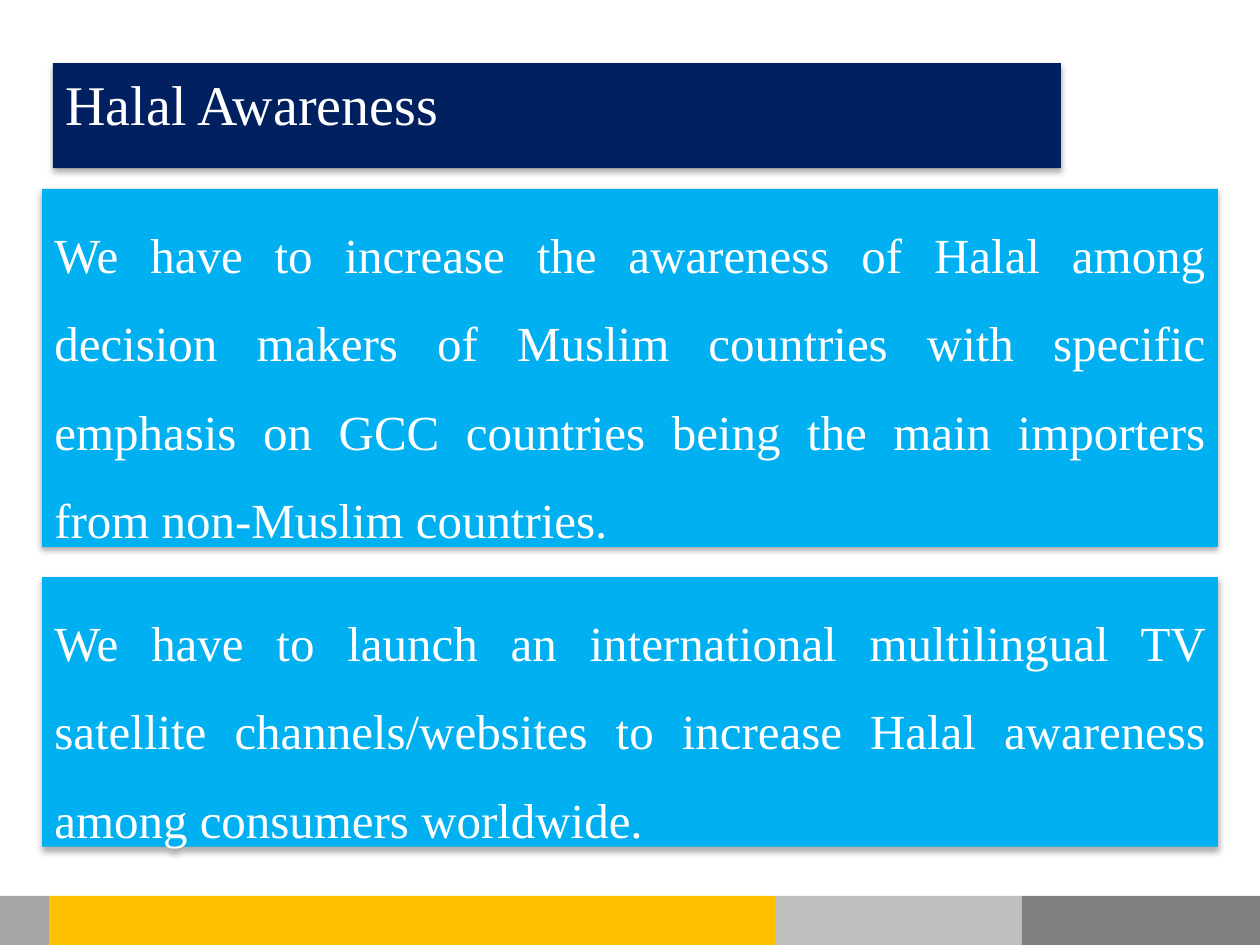
from dataclasses import dataclass

from lxml import etree
from pptx import Presentation
from pptx import util as u
from pptx.dml.color import RGBColor
from pptx.enum import shapes, text
from pptx.oxml.ns import qn


@dataclass(frozen=True)
class Theme:
    font: str = "Times New Roman"
    title_size: int = 32
    body_size: int = 28
    white: str = "FFFFFF"
    navy: str = "002060"
    sky: str = "00B0F0"
    gold: str = "FFC000"
    light_gray: str = "BFBFBF"
    mid_gray: str = "A6A6A6"
    dark_gray: str = "808080"


@dataclass(frozen=True)
class Box:
    left: float
    top: float
    width: float
    height: float


@dataclass(frozen=True)
class Panel:
    top: float
    height: float
    wording: str


@dataclass(frozen=True)
class Band:
    left: float
    right: float
    color: str


THEME = Theme()
SLIDE_WIDTH, SLIDE_HEIGHT = 10, 7.5
PANEL_MARGIN = SLIDE_WIDTH / 30
BAND_HEIGHT = 0.39

TITLE_BOX = Box(0.42, 0.5, 0.8 * SLIDE_WIDTH, 0.64)
PANELS = [
    Panel(1.5, 2.84, "We have to increase the awareness of Halal among decision makers "
          "of Muslim countries with specific emphasis on GCC countries being the main "
          "importers from non-Muslim countries."),
    Panel(4.58, 2.14, "We have to launch an international multilingual TV satellite "
          "channels/websites to increase Halal awareness among consumers worldwide."),
]
BANDS = [
    Band(0, BAND_HEIGHT, THEME.mid_gray),
    Band(BAND_HEIGHT, 6.16, THEME.gold),
    Band(6.16, 8.11, THEME.light_gray),
    Band(8.11, SLIDE_WIDTH, THEME.dark_gray),
]


def format_shape(shape, color: str) -> None:
    """Give a shape a flat fill, no outline and no shadow."""
    shape.fill.solid()
    shape.fill.fore_color.rgb = RGBColor.from_string(color)
    shape.line.fill.background()
    shape.shadow.inherit = False


def add_rectangle(slide, box: Box, color: str):
    lengths = (u.Inches(value) for value in (box.left, box.top, box.width, box.height))
    shape = slide.shapes.add_shape(shapes.MSO_SHAPE.RECTANGLE, *lengths)
    format_shape(shape, color)
    return shape


def add_soft_shadow(shape) -> None:
    """Drop a faint black shadow straight below the shape."""
    effects = shape._element.spPr.find(qn("a:effectLst"))
    shadow = etree.SubElement(
        effects, qn("a:outerShdw"), blurRad=str(u.Pt(3.5)), dist=str(u.Pt(2.2)),
        dir=str(90 * 60000), algn="ctr", rotWithShape="0")
    color = etree.SubElement(shadow, qn("a:srgbClr"), val="000000")
    etree.SubElement(color, qn("a:alpha"), val="32000")


def write_text(shape, wording: str, *, size: int, line_spacing: float = 1.0) -> None:
    frame = shape.text_frame
    frame.word_wrap = True
    frame.auto_size = text.MSO_AUTO_SIZE.SHAPE_TO_FIT_TEXT
    frame.vertical_anchor = text.MSO_ANCHOR.TOP
    paragraph = frame.paragraphs[0]
    paragraph.alignment = text.PP_ALIGN.JUSTIFY
    paragraph.line_spacing = line_spacing
    run = paragraph.add_run()
    run.text = wording
    run.font.name = THEME.font
    run.font.size = u.Pt(size)
    run.font.color.rgb = RGBColor.from_string(THEME.white)


def main() -> None:
    presentation = Presentation()
    presentation.slide_width = u.Inches(SLIDE_WIDTH)
    presentation.slide_height = u.Inches(SLIDE_HEIGHT)
    slide = presentation.slides.add_slide(
        presentation.slide_layouts.get_by_name("Title Only"))

    # Title bar
    title = slide.shapes.title
    title.left, title.top = u.Inches(TITLE_BOX.left), u.Inches(TITLE_BOX.top)
    title.width, title.height = u.Inches(TITLE_BOX.width), u.Inches(TITLE_BOX.height)
    format_shape(title, THEME.navy)
    add_soft_shadow(title)
    write_text(title, "Halal Awareness", size=THEME.title_size)

    # Text panels
    for panel in PANELS:
        box = Box(PANEL_MARGIN, panel.top, SLIDE_WIDTH - 2 * PANEL_MARGIN, panel.height)
        shape = add_rectangle(slide, box, THEME.sky)
        add_soft_shadow(shape)
        write_text(shape, panel.wording, size=THEME.body_size, line_spacing=1.5)

    # Footer bands
    for band in BANDS:
        box = Box(band.left, SLIDE_HEIGHT - BAND_HEIGHT,
                  band.right - band.left, BAND_HEIGHT)
        add_rectangle(slide, box, band.color)

    presentation.save("out.pptx")


if __name__ == "__main__":
    main()
